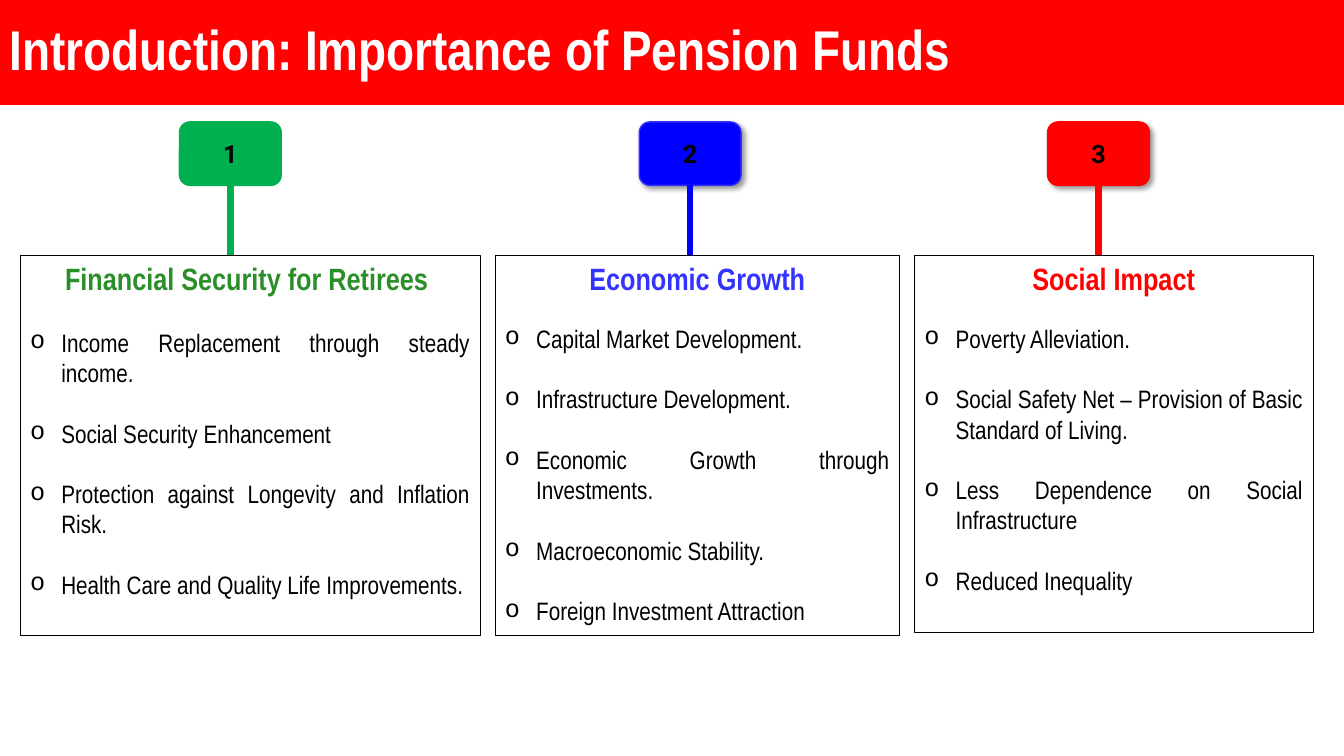
import pptx
import pptx.util
import pptx.dml.color
import pptx.enum.shapes
import pptx.enum.text
import pptx.oxml
import pptx.oxml.ns

Inches = pptx.util.Inches
Pt = pptx.util.Pt
RGBColor = pptx.dml.color.RGBColor
MSO_SHAPE = pptx.enum.shapes.MSO_SHAPE
ALIGN = pptx.enum.text.PP_ALIGN
ANCHOR = pptx.enum.text.MSO_ANCHOR
NS = pptx.oxml.ns.nsdecls("a")

WHITE = RGBColor(0xFF, 0xFF, 0xFF)
BLACK = RGBColor(0, 0, 0)
RED = RGBColor(0xFF, 0, 0)
BANNER_RED = RGBColor(0xFF, 0x01, 0x01)
GREEN = RGBColor(0, 0xB0, 0x50)
DARK_GREEN = RGBColor(0x2B, 0x8F, 0x29)
BLUE = RGBColor(0, 0, 0xFF)
LIGHT_BLUE = RGBColor(0x33, 0x33, 0xFF)

PANEL_TOP, BADGE_TOP = 2.53, 1.21
BADGE_W, BADGE_H = 1.01, 0.63

# Per column: panel left, width, height, badge left, heading, heading colour,
# badge fill, badge outline, stem colour, shadow, gap under heading (pt), items
COLUMNS = [
    (0.2, 4.56, 3.77, 1.78, "Financial Security for Retirees ", DARK_GREEN,
     GREEN, GREEN, GREEN, False, 21.6,
     ["Income Replacement through steady income.",
      "Social Security Enhancement",
      "Protection against Longevity and Inflation Risk.",
      "Health Care and Quality Life Improvements."]),
    (4.91, 4.01, 3.77, 6.34, "Economic Growth", LIGHT_BLUE,
     BLUE, LIGHT_BLUE, BLUE, True, 18.8,
     ["Capital Market Development.",
      "Infrastructure Development.",
      "Economic Growth through Investments.",
      "Macroeconomic Stability.",
      "Foreign Investment Attraction"]),
    (9.07, 3.95, 3.74, 10.39, "Social Impact", RED,
     BANNER_RED, RED, RED, True, 18.8,
     ["Poverty Alleviation.",
      "Social Safety Net – Provision of Basic Standard of Living.",
      "Less Dependence on Social Infrastructure",
      "Reduced Inequality"]),
]


def add_text(p, text, size=18, color=BLACK, bold=False, font="Arial Narrow",
             align=ALIGN.LEFT, before=0, spacing=None, bullet=None):
    if bullet:
        pPr = p._p.get_or_add_pPr()
        pPr.set("marL", str(Inches(0.31)))
        pPr.set("indent", str(-Inches(0.31)))
        for xml in (f'<a:buFont {NS} typeface="Courier New"/>',
                    f'<a:buChar {NS} char="{bullet}"/>'):
            pPr.append(pptx.oxml.parse_xml(xml))
    p.alignment = align
    if before:
        p.space_before = Pt(before)
    if spacing:
        p.line_spacing = spacing
    r = p.add_run()
    r.text = text
    r.font.name, r.font.size, r.font.bold = font, Pt(size), bold
    r.font.color.rgb = color


class Deck:
    heading_size, stem_width, item_gap = 22, 4.5, 21.6

    def __init__(self, prs):
        self.slide = prs.slides.add_slide(prs.slide_layouts[6])

    def box(self, kind, left, top, width, height, fill=None, line=None,
            line_width=1, anchor=ANCHOR.TOP):
        sp = self.slide.shapes.add_shape(
            kind, Inches(left), Inches(top), Inches(width), Inches(height))
        sp.shadow.inherit = False
        if fill is None:
            sp.fill.background()
        else:
            sp.fill.solid()
            sp.fill.fore_color.rgb = fill
        if line is None:
            sp.line.fill.background()
        else:
            sp.line.color.rgb = line
            sp.line.width = Pt(line_width)
        sp.text_frame.word_wrap = True
        sp.text_frame.vertical_anchor = anchor
        return sp

    def banner(self, text):
        sp = self.box(MSO_SHAPE.RECTANGLE, 0, -0.01, 13.33, 1.05,
                      fill=BANNER_RED, anchor=ANCHOR.MIDDLE)
        add_text(sp.text_frame.paragraphs[0], text, size=40, color=WHITE,
                 bold=True, spacing=0.9)

    def panel(self, left, width, height, heading, color, first_gap, items):
        sp = self.box(MSO_SHAPE.RECTANGLE, left, PANEL_TOP, width, height,
                      line=BLACK, line_width=0.25)
        tf = sp.text_frame
        tf.auto_size = pptx.enum.text.MSO_AUTO_SIZE.SHAPE_TO_FIT_TEXT
        add_text(tf.paragraphs[0], heading, size=self.heading_size,
                 color=color, bold=True, align=ALIGN.CENTER)
        for i, item in enumerate(items):
            add_text(tf.add_paragraph(), item, align=ALIGN.JUSTIFY, bullet="o",
                     before=self.item_gap if i else first_gap)

    def badge(self, left, number, fill, line, shadow):
        sp = self.box(MSO_SHAPE.ROUNDED_RECTANGLE, left, BADGE_TOP, BADGE_W,
                      BADGE_H, fill=fill, line=line, anchor=ANCHOR.MIDDLE)
        if shadow:
            effects = sp._element.spPr.find(pptx.oxml.ns.qn("a:effectLst"))
            effects.append(pptx.oxml.parse_xml(
                f'<a:outerShdw {NS} blurRad="{Pt(4)}" dist="{Pt(3)}" '
                f'dir="2700000" algn="tl" rotWithShape="0">'
                f'<a:srgbClr val="{BLACK}"><a:alpha val="40000"/></a:srgbClr>'
                f'</a:outerShdw>'))
        add_text(sp.text_frame.paragraphs[0], str(number), bold=True,
                 font="Roboto", align=ALIGN.CENTER)
        return sp

    def stem(self, badge, color):
        """Line from the panel's top edge up to the badge."""
        x = badge.left + badge.width // 2
        line = self.slide.shapes.add_connector(
            pptx.enum.shapes.MSO_CONNECTOR.STRAIGHT,
            x, Inches(PANEL_TOP), x, badge.top + badge.height)
        line.end_connect(badge, 2)
        line.line.color.rgb = color
        line.line.width = Pt(self.stem_width)
        line._element.spPr.append(
            pptx.oxml.parse_xml(f"<a:effectLst {NS}/>"))


def main():
    prs = pptx.Presentation()
    prs.slide_width, prs.slide_height = Inches(13.33), Inches(7.5)
    deck = Deck(prs)
    deck.banner("Introduction: Importance of Pension Funds")
    for number, column in enumerate(COLUMNS, start=1):
        (left, width, height, badge_left, heading, heading_color,
         fill, outline, stem_color, shadow, first_gap, items) = column
        deck.panel(left, width, height, heading, heading_color, first_gap, items)
        badge = deck.badge(badge_left, number, fill, outline, shadow)
        deck.stem(badge, stem_color)
    prs.save("out.pptx")


if __name__ == "__main__":
    main()
